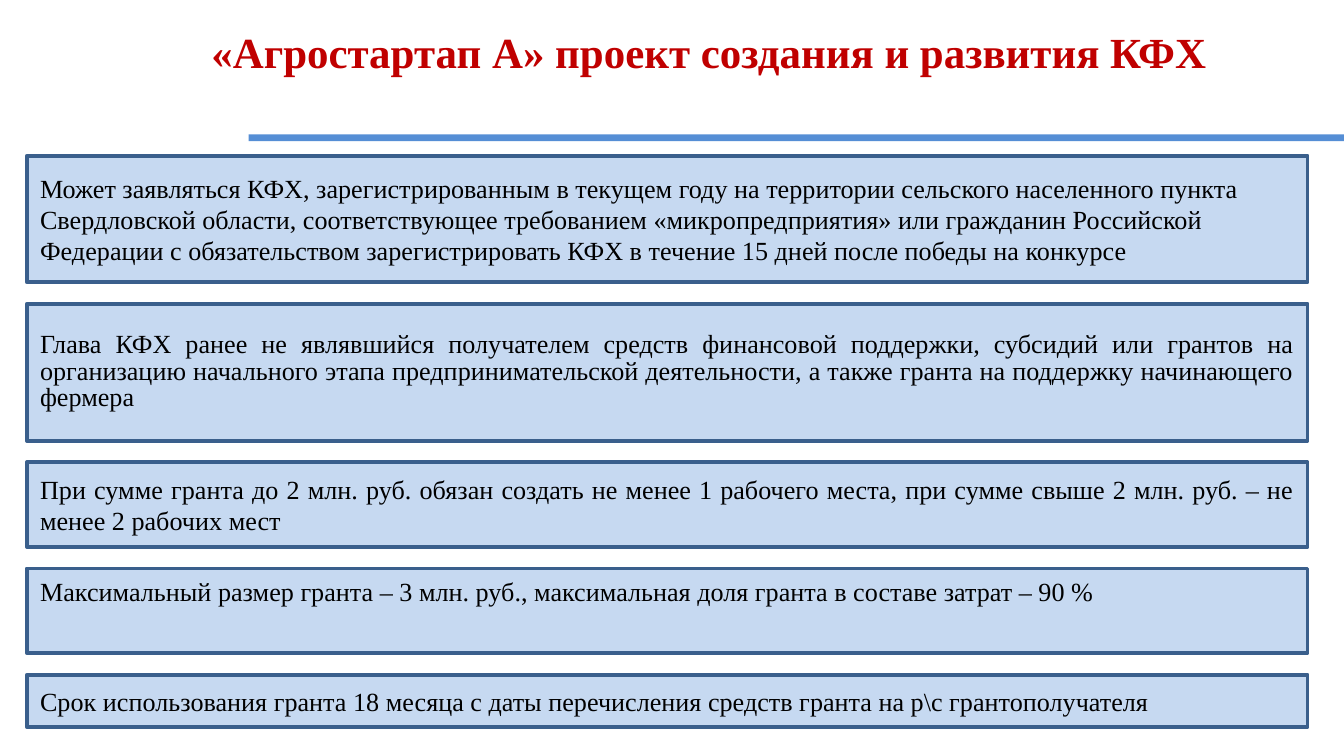
import pptx
import pptx.dml.color
import pptx.enum.shapes
import pptx.enum.text
import pptx.util

Inches = pptx.util.Inches
Pt = pptx.util.Pt
Align = pptx.enum.text.PP_ALIGN
Anchor = pptx.enum.text.MSO_ANCHOR

TITLE_RED = pptx.dml.color.RGBColor(0xC0, 0x00, 0x00)
BOX_FILL = pptx.dml.color.RGBColor(0xC6, 0xD9, 0xF1)
BOX_LINE = pptx.dml.color.RGBColor(0x3A, 0x5F, 0x8C)
RULE_BLUE = pptx.dml.color.RGBColor(0x55, 0x8E, 0xD5)
BLACK = pptx.dml.color.RGBColor(0x00, 0x00, 0x00)

TITLE_FONT = {"name": "Times New Roman", "size": Pt(23), "bold": True}
BODY_FONT = {"name": "Times New Roman", "size": Pt(14), "bold": False}

BOX_LEFT, BOX_WIDTH = 0.2, 9.53
FIRST_TOP, BOX_GAP = 1.16, 0.16

CONDITIONS = [
    (0.94, "Может заявляться КФХ, зарегистрированным в текущем году на территории сельского населенного пункта Свердловской области, соответствующее требованием «микропредприятия» или гражданин Российской Федерации с обязательством зарегистрировать КФХ в течение 15 дней после победы на конкурсе",
     Anchor.MIDDLE, {"alignment": Align.LEFT}),
    (1.02, "Глава КФХ ранее не являвшийся получателем средств финансовой поддержки, субсидий или грантов на организацию начального этапа предпринимательской деятельности, а также гранта на поддержку начинающего фермера ",
     Anchor.MIDDLE, {"alignment": Align.JUSTIFY, "line_spacing": Pt(14)}),
    (0.63, "При сумме гранта до 2 млн. руб. обязан создать не менее 1 рабочего места, при сумме свыше 2 млн. руб. – не менее 2 рабочих мест",
     Anchor.MIDDLE, {"alignment": Align.JUSTIFY}),
    (0.63, "Максимальный размер гранта – 3 млн. руб., максимальная доля гранта в составе затрат – 90 %",
     Anchor.TOP, {"alignment": Align.JUSTIFY}),
    (0.39, "Срок использования гранта 18 месяца с даты перечисления средств гранта на р\\с грантополучателя",
     Anchor.MIDDLE, {"alignment": Align.LEFT}),
]


def write_text(shape, text, anchor, font_format, color, paragraph_format):
    frame = shape.text_frame
    frame.word_wrap = True
    frame.vertical_anchor = anchor
    frame.text = text
    paragraph = frame.paragraphs[0]
    for name, value in paragraph_format.items():
        setattr(paragraph, name, value)
    font = paragraph.runs[0].font
    for name, value in font_format.items():
        setattr(font, name, value)
    font.color.rgb = color


def add_rectangle(slide, left, top, width, height, fill):
    shape = slide.shapes.add_shape(
        pptx.enum.shapes.MSO_SHAPE.RECTANGLE,
        Inches(left), Inches(top), Inches(width), Inches(height))
    shape.shadow.inherit = False
    shape.fill.solid()
    shape.fill.fore_color.rgb = fill
    return shape


presentation = pptx.Presentation()
presentation.slide_width = Inches(10)
presentation.slide_height = Inches(10 * 9 / 16)
slide = presentation.slides.add_slide(presentation.slide_layouts.get_by_name("Title Only"))

title = slide.shapes.title
title.left, title.top = Inches(0.75), Inches(0.14)
title.width, title.height = Inches(9.06), Inches(0.79)
write_text(title, "«Агростартап А» проект создания и развития КФХ",
           Anchor.TOP, TITLE_FONT, TITLE_RED, {"alignment": Align.CENTER})

top = FIRST_TOP
for height, text, anchor, paragraph_format in CONDITIONS:
    box = add_rectangle(slide, BOX_LEFT, top, BOX_WIDTH, height, BOX_FILL)
    box.line.color.rgb = BOX_LINE
    box.line.width = Pt(2)
    write_text(box, text, anchor, BODY_FONT, BLACK, paragraph_format)
    top += height + BOX_GAP

rule = add_rectangle(slide, 1.85, 1, 8.15, 0.05, RULE_BLUE)
rule.line.fill.background()

presentation.save("out.pptx")
